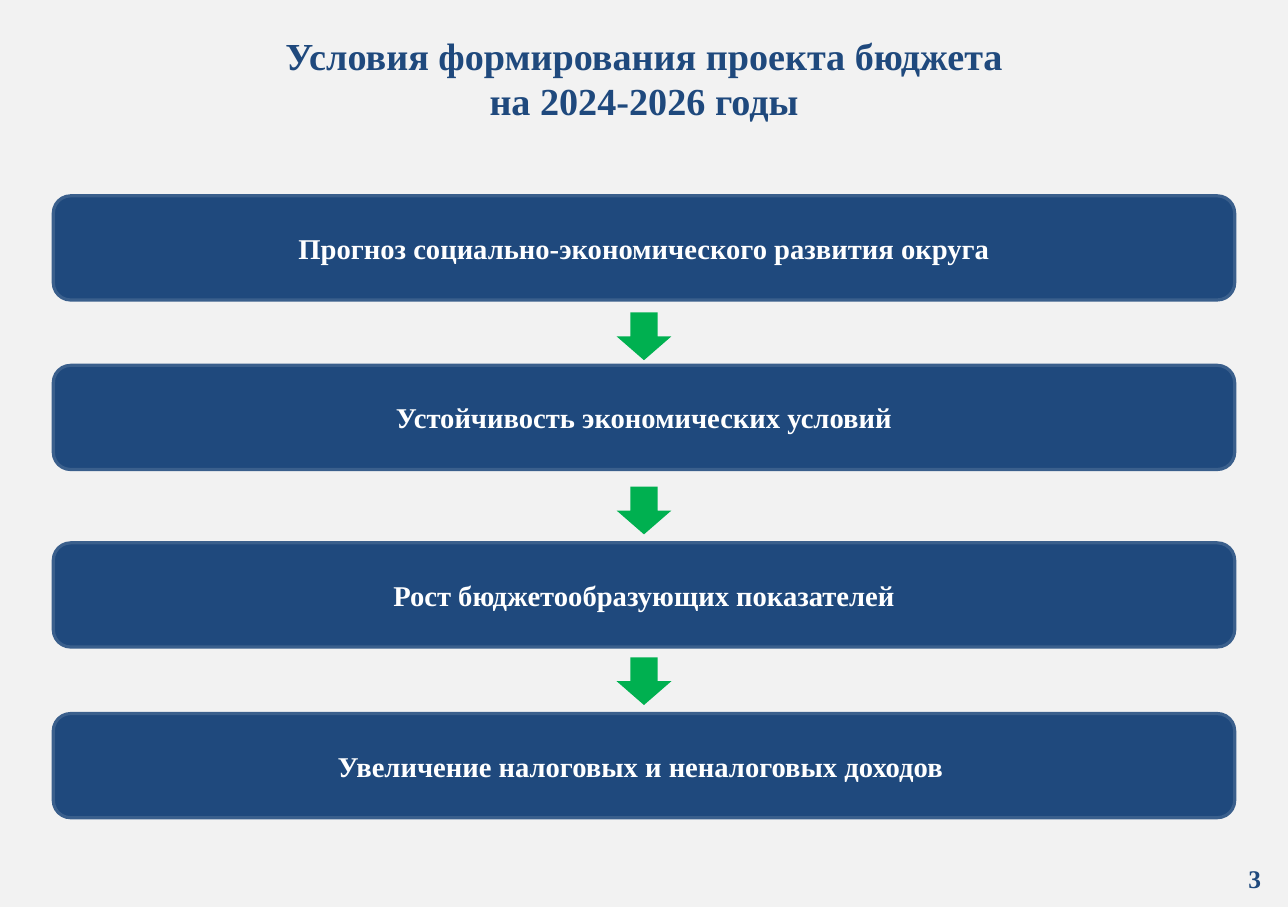
from pptx import Presentation
from pptx.dml.color import RGBColor
from pptx.enum.shapes import MSO_SHAPE
from pptx.enum.text import MSO_ANCHOR, PP_ALIGN
from pptx.util import Pt

ROUNDED, DOWN_ARROW = MSO_SHAPE.ROUNDED_RECTANGLE, MSO_SHAPE.DOWN_ARROW
CENTER, RIGHT = PP_ALIGN.CENTER, PP_ALIGN.RIGHT
MIDDLE = MSO_ANCHOR.MIDDLE

TITLE = "Условия формирования проекта бюджета\vна 2024-2026 годы"
PAGE_NUMBER = "3"
CONDITIONS = [
    ("Прогноз социально-экономического развития округа", 123.1),
    ("Устойчивость экономических условий", 229.7),
    ("Рост бюджетообразующих показателей", 341.3),
    ("Увеличение налоговых и неналоговых доходов ", 448.6),
]
ARROW_TOPS = [196.5, 306, 413.3]

FONT = "Times New Roman"
BACKGROUND, NAVY, BORDER = "F2F2F2", "1F497D", "3A5F8C"
GREEN, WHITE = "00B050", "FFFFFF"

SLIDE_WIDTH, SLIDE_HEIGHT = 810, 570.24
BOX_WIDTH, BOX_HEIGHT = 743, 65.5
ARROW_WIDTH, ARROW_HEIGHT = 34.5, 30


def color(value):
    """Return the colour for a hex string."""
    return RGBColor.from_string(value)


def write_text(shape, text, size, font_color=NAVY, align=CENTER, right_inset=0):
    """Write bold, vertically centred text into a shape."""
    frame = shape.text_frame
    frame.word_wrap = True
    frame.vertical_anchor = MIDDLE
    frame.margin_left = frame.margin_top = frame.margin_bottom = 0
    frame.margin_right = Pt(right_inset)
    paragraph = frame.paragraphs[0]
    paragraph.text = text
    paragraph.alignment = align
    for run in paragraph.runs:
        run.font.name = FONT
        run.font.size = Pt(size)
        run.font.bold = True
        run.font.color.rgb = color(font_color)


def add_text_box(slide, left, top, width, height, text, size, **text_format):
    """Add a text box holding one paragraph."""
    box = slide.shapes.add_textbox(Pt(left), Pt(top), Pt(width), Pt(height))
    write_text(box, text, size, **text_format)


def add_centered_shape(slide, kind, top, width, height, fill, line=None):
    """Add a filled shape centred across the slide."""
    left = (SLIDE_WIDTH - width) / 2
    shape = slide.shapes.add_shape(kind, Pt(left), Pt(top), Pt(width), Pt(height))
    shape.shadow.inherit = False
    shape.fill.solid()
    shape.fill.fore_color.rgb = color(fill)
    if line:
        shape.line.color.rgb = color(line)
        shape.line.width = Pt(2)
    else:
        shape.line.fill.background()
    return shape


def main():
    """Build the slide and save it."""
    presentation = Presentation()
    presentation.slide_width = Pt(SLIDE_WIDTH)
    presentation.slide_height = Pt(SLIDE_HEIGHT)
    slide = presentation.slides.add_slide(presentation.slide_layouts[6])
    slide.background.fill.solid()
    slide.background.fill.fore_color.rgb = color(BACKGROUND)

    add_text_box(slide, 0, 15.8, SLIDE_WIDTH, 66.2, TITLE, 24)
    for text, top in CONDITIONS:
        box = add_centered_shape(slide, ROUNDED, top, BOX_WIDTH, BOX_HEIGHT, NAVY, BORDER)
        write_text(box, text, 18, font_color=WHITE)
    for top in ARROW_TOPS:
        add_centered_shape(slide, DOWN_ARROW, top, ARROW_WIDTH, ARROW_HEIGHT, GREEN)
    add_text_box(slide, 772.6, 536.4, 32.4, 31.7, PAGE_NUMBER, 16, align=RIGHT, right_inset=12)

    presentation.save("out.pptx")


if __name__ == "__main__":
    main()
